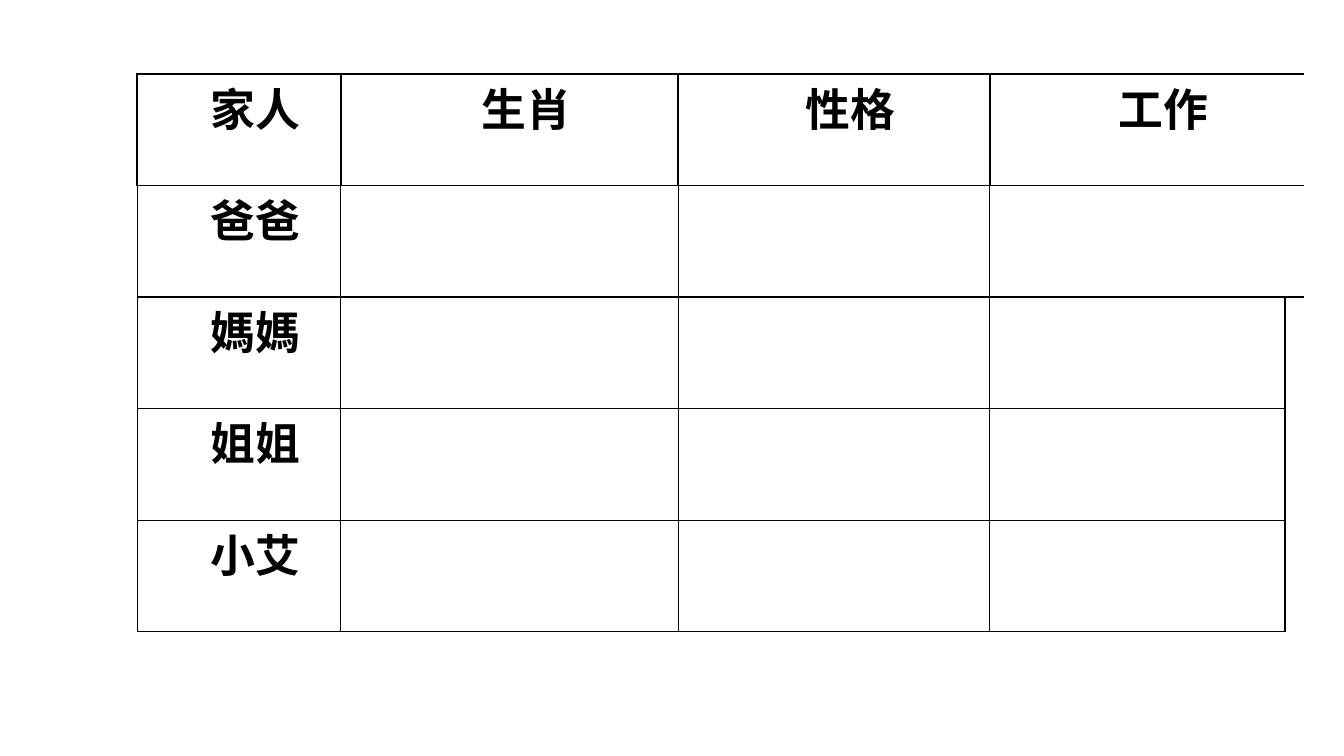
from dataclasses import dataclass

from lxml import etree
from pptx import Presentation
from pptx.dml.color import RGBColor
from pptx.enum.text import PP_ALIGN
from pptx.oxml.ns import qn
from pptx.util import Pt

CENTER = PP_ALIGN.CENTER
BLANK_LAYOUT = 6


@dataclass(frozen=True)
class Theme:
    ink: str = "000000"
    font: str = "Arial"
    label_size: float = 32
    header_line: float = 1.5
    body_line: float = 1
    side_inset: float = 5.4
    label_indent: float = 24


THEME = Theme()
TOPICS = ["家人", "生肖", "性格", "工作"]
FAMILY = ["爸爸", "媽媽", "姐姐", "小艾"]
COLUMN_WIDTHS = [145.5, 241, 222.5, 211, 7.5]
EDGE = len(COLUMN_WIDTHS) - 1
MERGED_ROWS = 2


def set_borders(cell, widths):
    """Draw the sides listed in widths (L, R, T, B) and clear the others."""
    properties = cell._tc.get_or_add_tcPr()
    for side in "LRTB":
        width = widths.get(side, 0)
        line = etree.SubElement(properties, qn(f"a:ln{side}"), w=str(Pt(width)))
        if width:
            fill = etree.SubElement(line, qn("a:solidFill"))
            etree.SubElement(fill, qn("a:srgbClr"), val=THEME.ink)
        else:
            etree.SubElement(line, qn("a:noFill"))


def border_widths(row, column):
    if column == EDGE and row >= MERGED_ROWS:
        sides = "LT" if row == MERGED_ROWS else "L"
    elif column == EDGE:
        sides = "RTB"
    elif column == EDGE - 1 and row < MERGED_ROWS:
        sides = "LTB"
    else:
        sides = "LRTB"
    widths = {side: THEME.header_line if row == 0 else THEME.body_line for side in sides}
    if row == 1:
        widths["T"] = THEME.header_line
    return widths


def write_label(cell, label):
    cell.text_frame.text = label
    paragraph = cell.text_frame.paragraphs[0]
    paragraph.alignment = CENTER
    properties = paragraph._p.get_or_add_pPr()
    properties.set("marL", str(Pt(THEME.label_indent)))
    properties.set("indent", "0")
    font = paragraph.runs[0].font
    font.name = THEME.font
    font.size = Pt(THEME.label_size)
    font.bold = True
    font.color.rgb = RGBColor.from_string(THEME.ink)


def add_family_table(slide, left, top, width, height):
    row_count = len(FAMILY) + 1
    table = slide.shapes.add_table(
        row_count, len(COLUMN_WIDTHS), Pt(left), Pt(top), Pt(width), Pt(height)
    ).table
    table.first_row = table.horz_banding = False
    for column, column_width in zip(table.columns, COLUMN_WIDTHS):
        column.width = Pt(column_width)
    for row in table.rows:
        row.height = Pt(height / row_count)

    for row in range(row_count):
        if row < MERGED_ROWS:
            table.cell(row, EDGE - 1).merge(table.cell(row, EDGE))
        for column in range(len(COLUMN_WIDTHS)):
            cell = table.cell(row, column)
            cell.margin_left = cell.margin_right = Pt(THEME.side_inset)
            cell.margin_top = cell.margin_bottom = 0
            set_borders(cell, border_widths(row, column))
            cell.fill.background()

    for column, topic in enumerate(TOPICS):
        write_label(table.cell(0, column), topic)
    for row, relative in enumerate(FAMILY, start=1):
        write_label(table.cell(row, 0), relative)


def main():
    presentation = Presentation()
    presentation.slide_width, presentation.slide_height = Pt(960), Pt(540)
    slide = presentation.slides.add_slide(presentation.slide_layouts[BLANK_LAYOUT])
    add_family_table(slide, 98, 52.8, sum(COLUMN_WIDTHS), 398.5)
    presentation.save("out.pptx")


if __name__ == "__main__":
    main()
